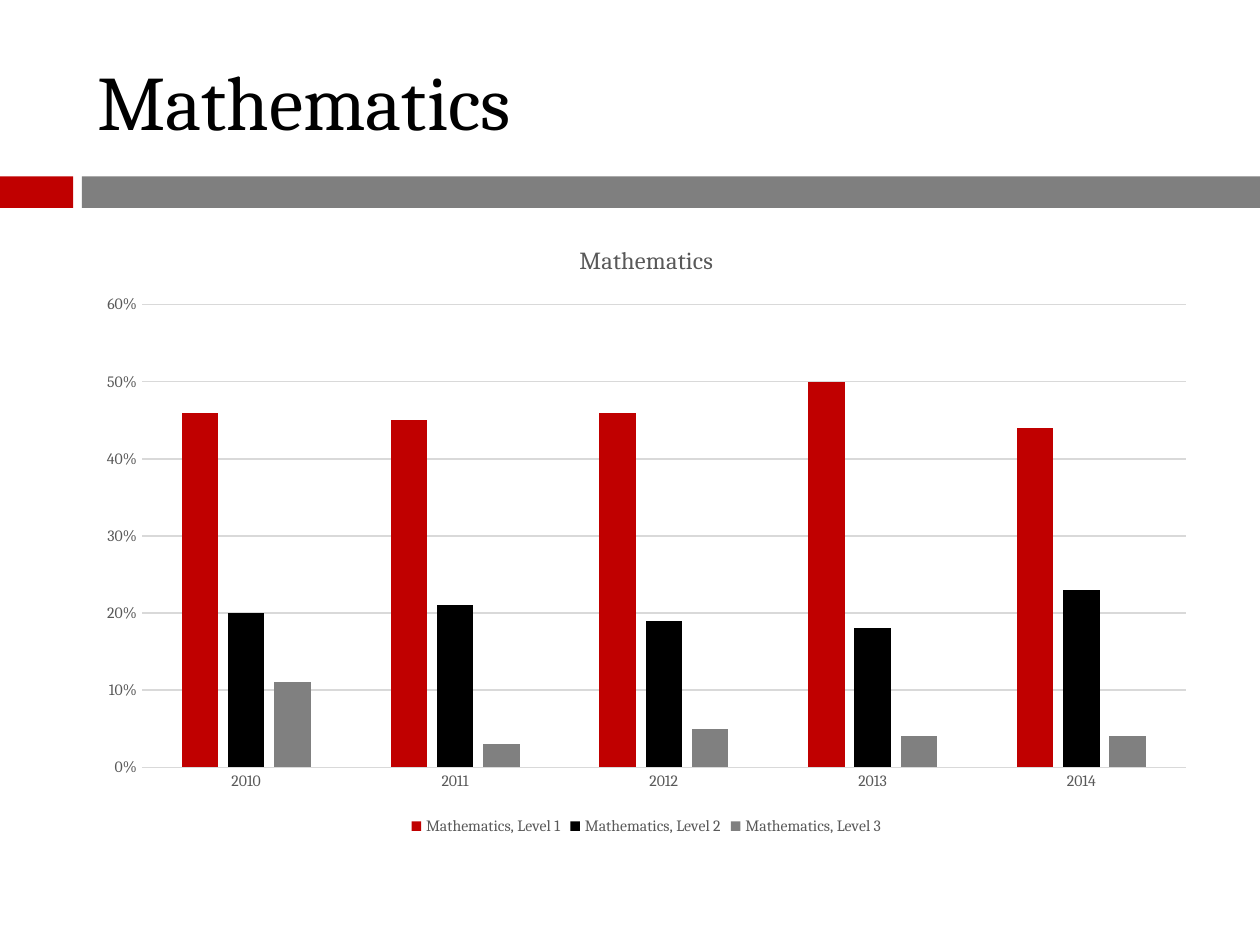
from typing import NamedTuple

from pptx import Presentation
from pptx.chart.data import CategoryChartData
from pptx.dml.color import RGBColor
from pptx.enum import chart as charts, shapes, text
from pptx.util import Inches, Pt

FONT = "Cambria"
COLORS = {
    "red": "C00000",
    "black": "000000",
    "band": "7F7F7F",
    "gray": "808080",
    "label": "595959",
    "grid": "D9D9D9",
}
YEARS = ["2010", "2011", "2012", "2013", "2014"]


class Band(NamedTuple):
    left: float
    width: float
    color: str


class Level(NamedTuple):
    name: str
    shares: list[float]
    color: str


BANDS = [Band(0, 0.58, "red"), Band(0.65, 9.35, "band")]
LEVELS = [
    Level("Mathematics, Level 1", [0.46, 0.45, 0.46, 0.5, 0.44], "red"),
    Level("Mathematics, Level 2", [0.2, 0.21, 0.19, 0.18, 0.23], "black"),
    Level("Mathematics, Level 3", [0.11, 0.03, 0.05, 0.04, 0.04], "gray"),
]


def rgb(name: str) -> RGBColor:
    return RGBColor.from_string(COLORS[name])


def style_font(font, size: float, color: str) -> None:
    font.name = FONT
    font.size = Pt(size)
    font.bold = False
    font.color.rgb = rgb(color)


def style_line(line) -> None:
    line.color.rgb = rgb("grid")
    line.width = Pt(0.75)


def draw_band(page, band: Band) -> None:
    box = page.shapes.add_shape(
        shapes.MSO_SHAPE.RECTANGLE,
        Inches(band.left), Inches(1.4), Inches(band.width), Inches(0.25),
    )
    box.shadow.inherit = False
    box.fill.solid()
    box.fill.fore_color.rgb = rgb(band.color)
    box.line.fill.background()


def fill_title(page) -> None:
    title = page.shapes.title
    title.left, title.top = Inches(0.67), Inches(0.25)
    title.width, title.height = Inches(8.92), Inches(1.08)
    frame = title.text_frame
    frame.vertical_anchor = text.MSO_ANCHOR.MIDDLE
    para = frame.paragraphs[0]
    para.alignment = text.PP_ALIGN.LEFT
    span = para.add_run()
    span.text = "Mathematics"
    style_font(span.font, 44, "black")


def style_axes(chart) -> None:
    for axis in (chart.category_axis, chart.value_axis):
        axis.major_tick_mark = charts.XL_TICK_MARK.NONE
        axis.minor_tick_mark = charts.XL_TICK_MARK.NONE
        style_font(axis.tick_labels.font, 9, "label")
    style_line(chart.category_axis.format.line)

    values = chart.value_axis
    values.minimum_scale, values.maximum_scale, values.major_unit = 0, 0.6, 0.1
    values.tick_labels.number_format = "0%"
    values.tick_labels.number_format_is_linked = False
    values.format.line.fill.background()
    values.has_major_gridlines = True
    style_line(values.major_gridlines.format.line)


def add_level_chart(page) -> None:
    data = CategoryChartData(number_format="0%")
    data.categories = YEARS
    for level in LEVELS:
        data.add_series(level.name, level.shares)
    chart = page.shapes.add_chart(
        charts.XL_CHART_TYPE.COLUMN_CLUSTERED,
        Inches(0.67), Inches(1.75), Inches(8.92), Inches(4.92), data,
    ).chart
    style_font(chart.font, 10, "black")

    chart.has_title = True
    span = chart.chart_title.text_frame.paragraphs[0].add_run()
    span.text = "Mathematics"
    style_font(span.font, 14, "label")
    chart.chart_title.include_in_layout = False

    chart.has_legend = True
    chart.legend.position = charts.XL_LEGEND_POSITION.BOTTOM
    chart.legend.include_in_layout = False
    style_font(chart.legend.font, 9, "label")

    style_axes(chart)
    plot = chart.plots[0]
    plot.gap_width, plot.overlap = 219, -27
    plot.vary_by_categories = False
    for series, level in zip(plot.series, LEVELS):
        series.invert_if_negative = False
        series.format.fill.solid()
        series.format.fill.fore_color.rgb = rgb(level.color)


def main() -> None:
    deck = Presentation()
    deck.slide_width, deck.slide_height = Inches(10), Inches(7.5)
    page = deck.slides.add_slide(deck.slide_layouts.get_by_name("Title Only"))
    for band in BANDS:
        draw_band(page, band)
    fill_title(page)
    add_level_chart(page)
    deck.save("out.pptx")


if __name__ == "__main__":
    main()
